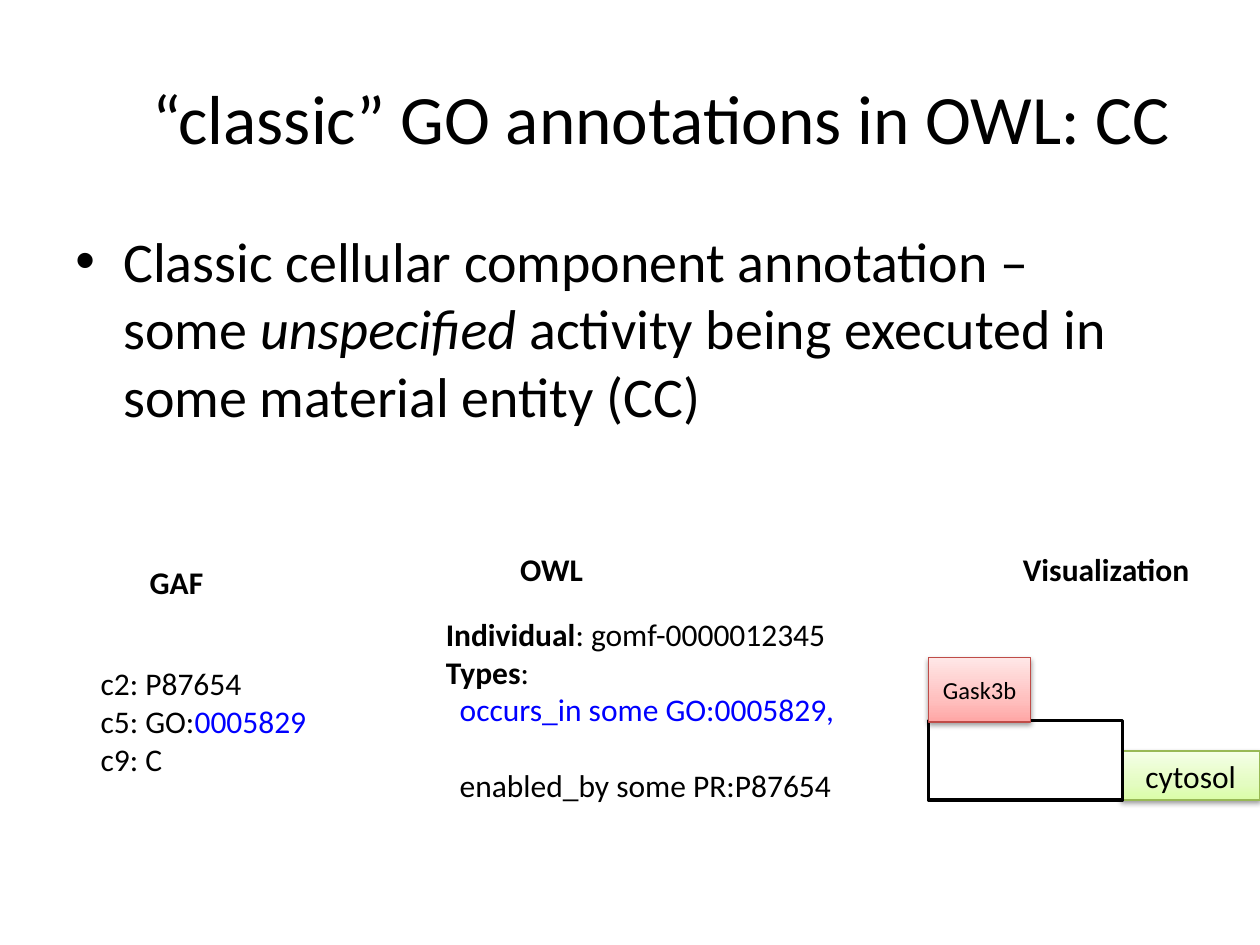
from dataclasses import dataclass

import lxml.etree
import pptx
import pptx.dml.color
import pptx.enum.shapes
import pptx.enum.text
import pptx.oxml
import pptx.oxml.ns
import pptx.util

Inches = pptx.util.Inches
Pt = pptx.util.Pt
RGBColor = pptx.dml.color.RGBColor
ALIGN = pptx.enum.text.PP_ALIGN
ANCHOR = pptx.enum.text.MSO_ANCHOR
AUTO_SIZE = pptx.enum.text.MSO_AUTO_SIZE

FONT = "Calibri"
BLACK = RGBColor(0, 0, 0)
WHITE = RGBColor(255, 255, 255)
BLUE = RGBColor(0, 0, 255)
GREEN_EDGE = RGBColor(0x98, 0xB9, 0x55)
RED_EDGE = RGBColor(0xBF, 0x4C, 0x48)
GREEN_STOPS = (
    (0, RGBColor(0xDA, 0xFD, 0xA7)),
    (35, RGBColor(0xE4, 0xFC, 0xC2)),
    (100, RGBColor(0xF5, 0xFF, 0xE7)),
)
RED_STOPS = (
    (0, RGBColor(0xFF, 0xA6, 0xA5)),
    (35, RGBColor(0xFF, 0xC0, 0xBF)),
    (100, RGBColor(0xFF, 0xE7, 0xE7)),
)


@dataclass
class Run:
    text: str
    color: RGBColor = BLACK
    bold: bool = False
    italic: bool = False


@dataclass
class Paragraph:
    runs: list[Run]
    indent: float = 0
    hanging: float = 0
    space_before: float = 0
    bullet: str = ""


@dataclass
class TextBlock:
    at: tuple[float, float, float, float]
    paragraphs: list[Paragraph]
    size: float = 18
    wrap: bool = False
    align: ALIGN = ALIGN.LEFT
    anchor: ANCHOR = ANCHOR.TOP


@dataclass
class Box:
    at: tuple[float, float, float, float]
    edge: RGBColor
    edge_width: float
    stops: tuple = ()
    label: str = ""
    size: float = 18


def line(*runs: Run, **layout) -> Paragraph:
    return Paragraph(list(runs), **layout)


def heading(text: str, left: float, top: float, width: float) -> TextBlock:
    return TextBlock((left, top, width, 0.4), [line(Run(text, bold=True))])


TEXT_BLOCKS = [
    TextBlock((0.5, 0.3, 9, 1.25),
              [line(Run("\t“classic” GO annotations in OWL: CC"))],
              size=39.6, wrap=True, align=ALIGN.CENTER, anchor=ANCHOR.MIDDLE),
    TextBlock((0.5, 1.75, 8.82, 2.47),
              [line(Run("Classic cellular component annotation – some "),
                    Run("unspecified ", italic=True),
                    Run("activity being executed in some material entity (CC)"),
                    indent=0.38, hanging=0.38, space_before=6.4, bullet="•")],
              size=32, wrap=True),
    TextBlock((3.44, 4.83, 3.32, 1.31),
              [line(Run("Individual", bold=True), Run(": gomf-0000012345")),
               line(Run("Types", bold=True), Run(":")),
               line(Run("occurs_in some GO:0005829,", BLUE), indent=0.11),
               line(Run("enabled_by some PR:P87654"), indent=0.11, space_before=21.6)]),
    heading("OWL", 4.03, 4.32, 0.71),
    heading("GAF", 1.09, 4.42, 0.63),
    heading("Visualization", 8.02, 4.32, 1.54),
    TextBlock((0.7, 5.22, 1.85, 1.01),
              [line(Run("c2: P87654")),
               line(Run("c5: GO:"), Run("0005829", BLUE)),
               line(Run("c9: C"))]),
]

BOXES = [
    Box((8.9, 5.96, 1.1, 0.39), GREEN_EDGE, 0.75, GREEN_STOPS, "cytosol"),
    Box((7.37, 5.72, 1.54, 0.63), BLACK, 2),
    Box((7.37, 5.22, 0.81, 0.51), RED_EDGE, 0.75, RED_STOPS, "Gask3b", 14),
]


def set_values(target, values: dict) -> None:
    for name, value in values.items():
        setattr(target, name, value)


def fill_paragraph(paragraph, content: Paragraph, size: float, align: ALIGN) -> None:
    set_values(paragraph, {"alignment": align, "space_before": Pt(content.space_before)})
    properties = paragraph._p.get_or_add_pPr()
    properties.set("marL", str(Inches(content.indent)))
    properties.set("indent", str(Inches(-content.hanging)))
    if content.bullet:
        bullet_font = lxml.etree.SubElement(properties, pptx.oxml.ns.qn("a:buFont"))
        bullet_font.set("typeface", "Arial")
        bullet = lxml.etree.SubElement(properties, pptx.oxml.ns.qn("a:buChar"))
        bullet.set("char", content.bullet)
    for part in content.runs:
        run = paragraph.add_run()
        run.text = part.text
        set_values(run.font, {"name": FONT, "size": Pt(size),
                              "bold": part.bold, "italic": part.italic})
        run.font.color.rgb = part.color


def draw_text(slide, block: TextBlock) -> None:
    frame = slide.shapes.add_textbox(*map(Inches, block.at)).text_frame
    set_values(frame, {
        "word_wrap": block.wrap,
        "auto_size": AUTO_SIZE.NONE if block.wrap else AUTO_SIZE.SHAPE_TO_FIT_TEXT,
        "vertical_anchor": block.anchor,
    })
    for index, content in enumerate(block.paragraphs):
        paragraph = frame.add_paragraph() if index else frame.paragraphs[0]
        fill_paragraph(paragraph, content, block.size, block.align)


def add_gradient_and_shadow(shape, stops: tuple) -> None:
    """Give the shape an upward gradient and a soft shadow below it."""
    namespace = pptx.oxml.ns.nsdecls("a")
    stop_xml = "".join(
        f'<a:gs pos="{position * 1000}"><a:srgbClr val="{color}"/></a:gs>'
        for position, color in stops)
    gradient = pptx.oxml.parse_xml(
        f'<a:gradFill {namespace} rotWithShape="1"><a:gsLst>{stop_xml}</a:gsLst>'
        '<a:lin ang="16200000" scaled="0"/></a:gradFill>')
    shadow = pptx.oxml.parse_xml(
        f'<a:outerShdw {namespace} blurRad="{Pt(3.1)}" dist="{Pt(1.6)}" dir="5400000" '
        'rotWithShape="0"><a:srgbClr val="000000"><a:alpha val="38000"/></a:srgbClr>'
        '</a:outerShdw>')
    properties = shape._element.spPr
    solid = properties.find(pptx.oxml.ns.qn("a:solidFill"))
    properties.replace(solid, gradient)
    properties.find(pptx.oxml.ns.qn("a:effectLst")).append(shadow)


def draw_box(slide, box: Box) -> None:
    shape = slide.shapes.add_shape(
        pptx.enum.shapes.MSO_SHAPE.RECTANGLE, *map(Inches, box.at))
    shape.shadow.inherit = False
    shape.fill.solid()
    shape.fill.fore_color.rgb = WHITE
    shape.line.color.rgb = box.edge
    shape.line.width = Pt(box.edge_width)
    if box.stops:
        add_gradient_and_shadow(shape, box.stops)
    if box.label:
        shape.text_frame.vertical_anchor = ANCHOR.MIDDLE
        fill_paragraph(shape.text_frame.paragraphs[0], line(Run(box.label)),
                       box.size, ALIGN.CENTER)


def main() -> None:
    deck = pptx.Presentation()
    set_values(deck, {"slide_width": Inches(10), "slide_height": Inches(7.5)})
    slide = deck.slides.add_slide(deck.slide_layouts[6])
    for block in TEXT_BLOCKS:
        draw_text(slide, block)
    for box in BOXES:
        draw_box(slide, box)
    deck.save("out.pptx")


if __name__ == "__main__":
    main()
